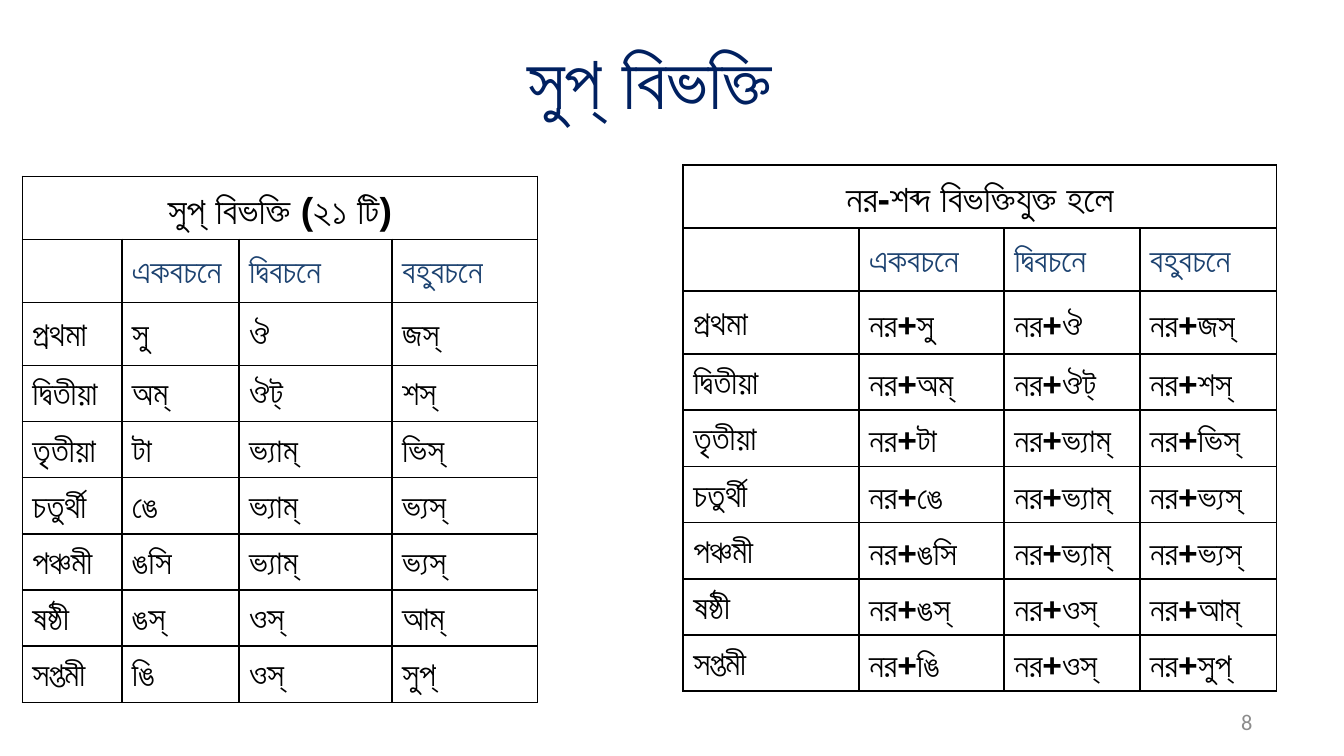
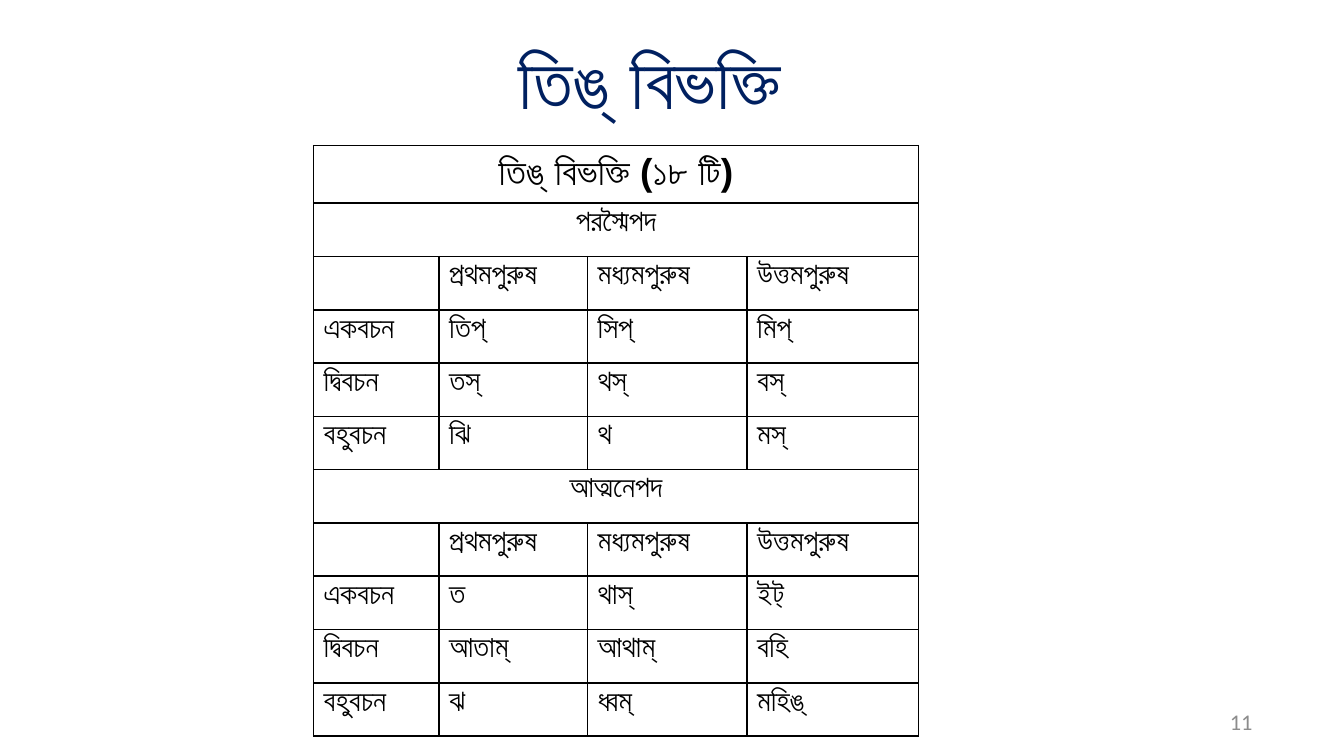
from lxml import etree
from pptx import Presentation
from pptx import util as u
from pptx.dml.color import RGBColor
from pptx.enum import shapes, text
from pptx.oxml import ns

Pt = u.Pt
COLORS = {"title": "002060", "heading": "1C4270", "body": "000000",
          "number": "8C8C8C", "border": "000000", "paper": "FFFFFF"}


def write(frame, words, size=18, color="body", font="Arial", bold=True,
          align=text.PP_ALIGN.JUSTIFY, spacing=None):
    paragraph = frame.paragraphs[0]
    paragraph.alignment = align
    paragraph.line_spacing = spacing
    run = paragraph.add_run()
    run.text = words
    run.font.name, run.font.size, run.font.bold = font, Pt(size), bold
    run.font.color.rgb = RGBColor.from_string(COLORS[color])


def add_border(cell):
    props = cell._tc.get_or_add_tcPr()
    for place, side in enumerate(("lnL", "lnR", "lnT", "lnB")):
        line = etree.Element(ns.qn("a:" + side), w=str(Pt(1)))
        fill = etree.SubElement(line, ns.qn("a:solidFill"))
        etree.SubElement(fill, ns.qn("a:srgbClr"), val=COLORS["border"])
        props.insert(place, line)


# Noun endings, shared by both tables of the first slide
numbers = ["", "একবচনে", "দ্বিবচনে", "বহুবচনে"]
endings = [
    ["প্রথমা", "সু", "ঔ", "জস্"],
    ["দ্বিতীয়া", "অম্", "ঔট্", "শস্"],
    ["তৃতীয়া", "টা", "ভ্যাম্", "ভিস্"],
    ["চতুর্থী", "ঙে", "ভ্যাম্", "ভ্যস্"],
    ["পঞ্চমী", "ঙসি", "ভ্যাম্", "ভ্যস্"],
    ["ষষ্ঠী", "ঙস্", "ওস্", "আম্"],
    ["সপ্তমী", "ঙি", "ওস্", "সুপ্"],
]
nara_forms = [[case] + ["নর+" + ending for ending in row] for case, *row in endings]

# Verb endings; a row with one entry spans the table
persons = ["", "প্রথমপুরুষ", "মধ্যমপুরুষ", "উত্তমপুরুষ"]
verb_rows = [
    ["তিঙ্ বিভক্তি (১৮ টি)"],
    ["পরস্মৈপদ"],
    persons,
    ["একবচন", "তিপ্", "সিপ্", "মিপ্"],
    ["দ্বিবচন", "তস্", "থস্", "বস্"],
    ["বহুবচন", "ঝি", "থ", "মস্"],
    ["আত্মনেপদ"],
    persons,
    ["একবচন", "ত", "থাস্", "ইট্"],
    ["দ্বিবচন", "আতাম্", "আথাম্", "বহি"],
    ["বহুবচন", "ঝ", "ধ্বম্", "মহিঙ্"],
]

noun_style = {"heights": [33.75] * 3 + [30.13] * 6, "size": 18,
              "anchor": text.MSO_ANCHOR.MIDDLE}
verb_style = {"heights": [30.9] + [28.56] * 10, "size": 16,
              "anchor": text.MSO_ANCHOR.TOP}

lessons = [
    ("সুপ্ বিভক্তি", "8", noun_style, [
        (12, 94.5, [53.3, 62.8, 82, 77.9],
         [["সুপ্ বিভক্তি (২১ টি)"], numbers] + endings),
        (366, 88.5, [94.2, 77.8, 72.7, 73.2],
         [["নর-শব্দ বিভক্তিযুক্ত হলে"], numbers] + nara_forms),
    ]),
    ("তিঙ্ বিভক্তি", "11", verb_style, [
        (168, 78, [67.2, 79.6, 85.5, 91.7], verb_rows),
    ]),
]

deck = Presentation()
deck.slide_width, deck.slide_height = Pt(720), Pt(405)

for title, page, style, tables in lessons:
    slide = deck.slides.add_slide(deck.slide_layouts[6])
    paper = RGBColor.from_string(COLORS["paper"])
    slide.background.fill.solid()
    slide.background.fill.fore_color.rgb = paper

    # Title band and page number
    band = slide.shapes.add_shape(shapes.MSO_SHAPE.RECTANGLE,
                                  Pt(36), Pt(15), Pt(624), Pt(55.5))
    band.shadow.inherit = False
    band.fill.solid()
    band.fill.fore_color.rgb = paper
    band.line.fill.background()
    footer = slide.shapes.add_textbox(Pt(510), Pt(376), Pt(168), Pt(21.5))
    for holder in (band, footer):
        holder.text_frame.word_wrap = True
        holder.text_frame.vertical_anchor = text.MSO_ANCHOR.MIDDLE
    write(band.text_frame, title, size=40, color="title",
          align=text.PP_ALIGN.CENTER)
    write(footer.text_frame, page, size=12, color="number", font="Calibri",
          bold=False, align=text.PP_ALIGN.RIGHT)

    # Ending tables
    for left, top, widths, rows in tables:
        heights = style["heights"]
        grid = slide.shapes.add_table(
            len(rows), len(widths), Pt(left), Pt(top),
            Pt(sum(widths)), Pt(sum(heights))).table
        grid.first_row = grid.horz_banding = False
        for column, width in zip(grid.columns, widths):
            column.width = Pt(width)
        for r, (entries, height) in enumerate(zip(rows, heights)):
            grid.rows[r].height = Pt(height)
            for cell in grid.rows[r].cells:
                cell.fill.background()
                cell.margin_left = cell.margin_right = Pt(5.4)
                cell.margin_top = cell.margin_bottom = 0
                cell.vertical_anchor = style["anchor"]
                add_border(cell)
            spans = len(entries) == 1
            if spans:
                grid.cell(r, 0).merge(grid.cell(r, len(widths) - 1))
            for c, entry in enumerate(entries):
                if entry:
                    write(grid.cell(r, c).text_frame, entry,
                          size=20 if r == 0 else style["size"],
                          color="heading" if entries is numbers else "body",
                          align=text.PP_ALIGN.CENTER if spans else text.PP_ALIGN.JUSTIFY,
                          spacing=1.15)

deck.save("out.pptx")
